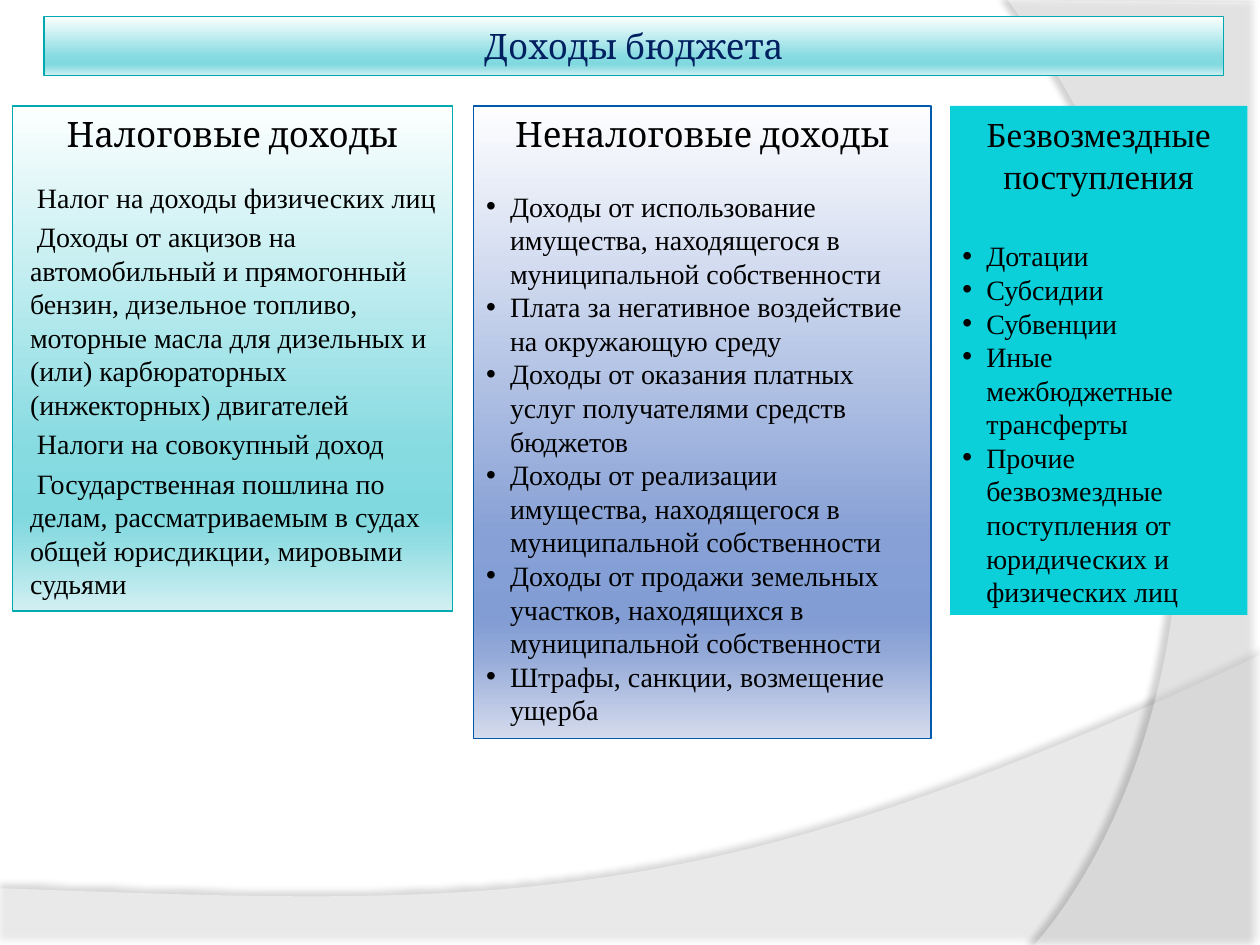
from dataclasses import dataclass

from lxml import etree
from pptx import Presentation, util as u
from pptx.dml import color
from pptx.enum import shapes, text
from pptx.oxml import ns

SERIF, HEAD = "Times New Roman", "Cambria"
MID, LEFT = text.PP_ALIGN.CENTER, text.PP_ALIGN.LEFT
STOPS = 0, 68, 81, 86, 100
TEAL = "FDFFFF", "86DBE1", "80D9DF", "90DDE3", "D3F0F2"
BLUE = "FEFEFF", "87A0D5", "829DD4", "91A7D7", "D4DBED"


@dataclass
class Panel:
    box: tuple[float, float, float, float]
    fill: tuple[str, ...]
    line: str
    head: str
    font: str
    gap: float = 0
    items: tuple[str, ...] = ()
    dots: bool = True
    ink: str = "000000"


@dataclass
class Wave:
    start: tuple[float, float]
    sides: list[tuple[float, float]]
    curve: list[tuple[float, float]]
    alpha: int
    shade: int
    dist: float
    angle: int


PANELS = [
    Panel((0.35, 0.13, 9.36, 0.47), TEAL, "00A8B0", "Доходы бюджета", HEAD, ink="002060"),
    Panel((0.1, 0.84, 3.49, 4.01), TEAL, "00A8B0", "Налоговые доходы", HEAD, 15, (
        " Налог на доходы физических лиц",
        " Доходы от акцизов на автомобильный и прямогонный бензин, дизельное топливо, "
        "моторные масла для дизельных и (или) карбюраторных (инжекторных) двигателей",
        " Налоги на совокупный доход",
        " Государственная пошлина по делам, рассматриваемым в судах общей юрисдикции, "
        "мировыми судьями",
    ), dots=False),
    Panel((3.76, 0.84, 3.63, 5.02), BLUE, "0059AB", "Неналоговые доходы", HEAD, 20, (
        "Доходы от использование имущества, находящегося в муниципальной собственности",
        "Плата за негативное воздействие на окружающую среду",
        "Доходы от оказания платных услуг получателями средств бюджетов",
        "Доходы от реализации имущества, находящегося в муниципальной собственности",
        "Доходы от продажи земельных участков, находящихся в муниципальной собственности",
        "Штрафы, санкции, возмещение ущерба",
    )),
    Panel((7.54, 0.84, 2.36, 4.04), ("0BD0D9",), "", "Безвозмездные поступления", SERIF, 24.5, (
        "Дотации",
        "Субсидии",
        "Субвенции",
        "Иные межбюджетные трансферты",
        "Прочие безвозмездные поступления от юридических и физических лиц",
    )),
]
WAVES = [
    Wave((0, 7.05), [(0, 7.5), (10, 7.5), (10, 5.2)],
         [(10, 5.2), (5.59, 7.29), (3.91, 7.19), (0, 7.05)], 45, 35, 3.5, 270),
    Wave((10, 0.02), [(10, 7.5), (8.21, 7.5)],
         [(8.21, 7.5), (9.35, 6.19), (10.18, 3), (8, 0)], 40, 45, 4, 180),
]


def rgb(code: str) -> color.RGBColor:
    return color.RGBColor.from_string(code)


def node(base, tag: str, **vals):
    return etree.SubElement(base, ns.qn(tag), {k: str(v) for k, v in vals.items()})


def put(obj, vals: dict) -> None:
    for name, val in vals.items():
        setattr(obj, name, val)


def paint(shape, fill: tuple[str, ...]) -> None:
    if len(fill) == 1:
        shape.fill.solid()
        shape.fill.fore_color.rgb = rgb(fill[0])
        return
    shape.fill.gradient()
    shape.fill.gradient_angle = 270
    stops = next(shape._element.iter(ns.qn("a:gsLst")))
    for old in list(stops):
        stops.remove(old)
    for pos, code in zip(STOPS, fill):
        node(node(stops, "a:gs", pos=pos * 1000), "a:srgbClr", val=code)


def write(para, words: str, font: str, size: float, ink: str, form: dict) -> None:
    put(para, {"text": words, **form})
    put(para.font, {"name": font, "size": u.Pt(size)})
    para.font.color.rgb = rgb(ink)


def indent(para, panel: Panel) -> None:
    props = para._p.get_or_add_pPr()
    left = u.Inches(0.19 if panel.dots else 0.04)
    props.set("marL", str(left))
    props.set("indent", str(-left if panel.dots else 0))
    if panel.dots:
        node(props, "a:buFont", typeface="Arial")
        node(props, "a:buChar", char="•")


def draw(slide, panel: Panel) -> None:
    shape = slide.shapes.add_shape(shapes.MSO_SHAPE.RECTANGLE, *map(u.Inches, panel.box))
    shape.shadow.inherit = False
    paint(shape, panel.fill)
    if panel.line:
        shape.line.color.rgb = rgb(panel.line)
        shape.line.width = u.Pt(0.75)
    else:
        shape.line.fill.background()
    frame = shape.text_frame
    anchor = text.MSO_ANCHOR.TOP if panel.items else text.MSO_ANCHOR.MIDDLE
    put(frame, {"word_wrap": True, "vertical_anchor": anchor})
    write(frame.paragraphs[0], panel.head, panel.font, 20, panel.ink, {"alignment": MID})
    for num, item in enumerate(panel.items):
        para = frame.add_paragraph()
        space = panel.gap if num == 0 else 0 if panel.dots else 3.3
        para.space_before = u.Pt(space)
        indent(para, panel)
        write(para, item, SERIF, 16, panel.ink, {"alignment": LEFT})


def bend(pts: list, steps: int = 40) -> list[tuple[float, float]]:
    out = []
    for num in range(1, steps + 1):
        t = num / steps
        parts = (1 - t) ** 3, 3 * t * (1 - t) ** 2, 3 * t * t * (1 - t), t ** 3
        out.append(tuple(sum(w * p[axis] for w, p in zip(parts, pts)) for axis in (0, 1)))
    return out


def sweep(slide, wave: Wave) -> None:
    pen = slide.shapes.build_freeform(*map(u.Inches, wave.start))
    pts = wave.sides + bend(wave.curve)
    pen.add_line_segments([(u.Inches(x), u.Inches(y)) for x, y in pts])
    shape = pen.convert_to_shape()
    shape.shadow.inherit = False
    paint(shape, ("FFFFFF",))
    shape.line.fill.background()
    props = shape._element.spPr
    tint = props.find(ns.qn("a:solidFill"))[0]
    node(tint, "a:alpha", val=wave.alpha * 1000)
    shade = node(props.find(ns.qn("a:effectLst")), "a:outerShdw", blurRad=u.Pt(4),
                 dist=u.Pt(wave.dist), dir=wave.angle * 60000, algn="ctr", rotWithShape=0)
    node(node(shade, "a:srgbClr", val="000000"), "a:alpha", val=wave.shade * 1000)


def main() -> None:
    deck = Presentation()
    put(deck, {"slide_width": u.Inches(10), "slide_height": u.Inches(7.5)})
    slide = deck.slides.add_slide(deck.slide_layouts[6])
    for wave in WAVES:
        sweep(slide, wave)
    for panel in PANELS:
        draw(slide, panel)
    deck.save("out.pptx")


if __name__ == "__main__":
    main()
